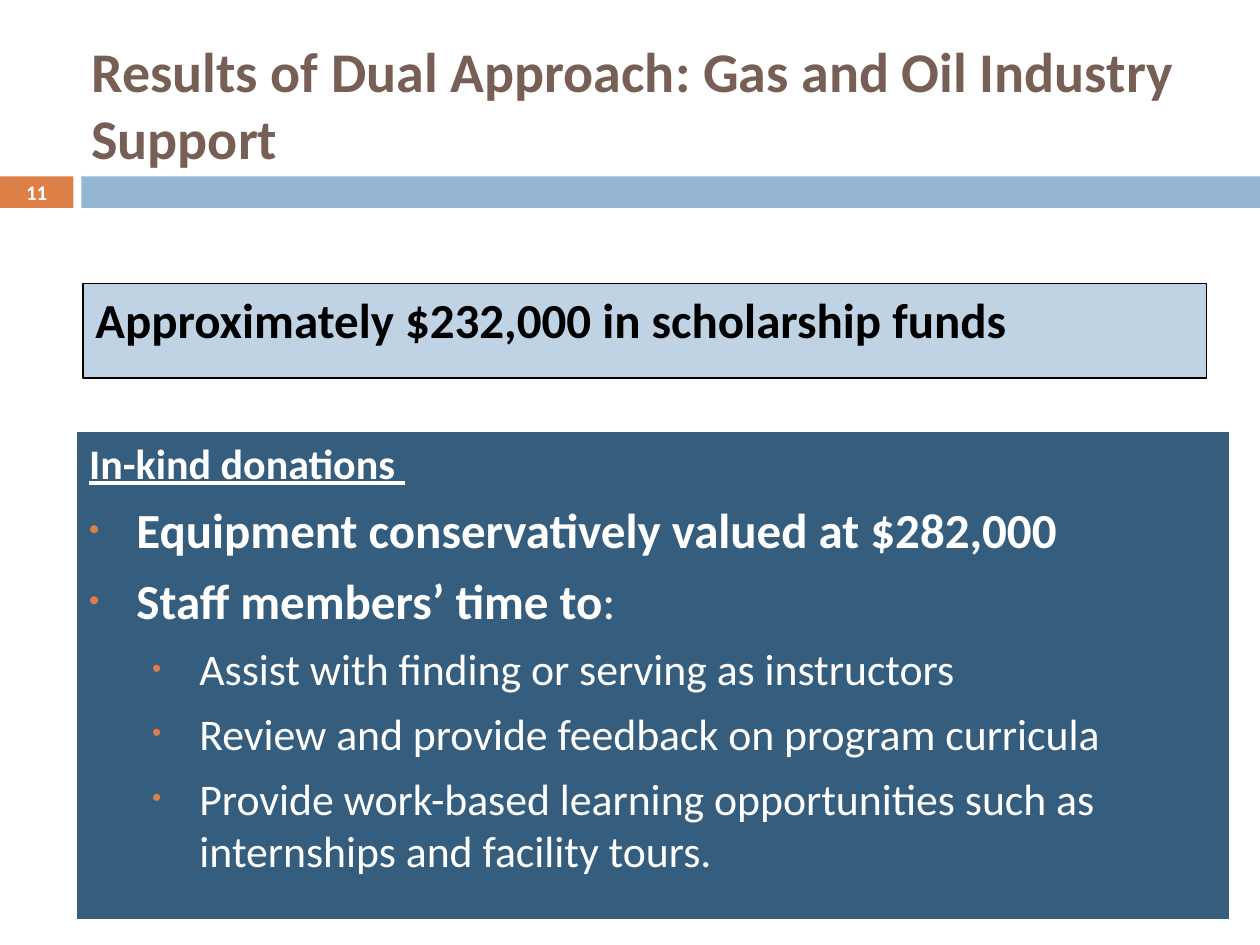
from lxml.etree import SubElement
from pptx import Presentation
from pptx.dml.color import RGBColor
from pptx.enum.shapes import MSO_SHAPE
from pptx.enum.text import MSO_ANCHOR, MSO_AUTO_SIZE, PP_ALIGN
from pptx.oxml.ns import qn
from pptx.util import Pt

BROWN = RGBColor(0x77, 0x5F, 0x55)
ORANGE = RGBColor(0xDD, 0x80, 0x47)
BLUE = RGBColor(0x94, 0xB6, 0xD2)
PALE = RGBColor(0xBF, 0xD3, 0xE4)
NAVY = RGBColor(0x35, 0x5D, 0x7E)
WHITE = RGBColor(0xFF, 0xFF, 0xFF)
BLACK = RGBColor(0, 0, 0)

TITLE = "Results of Dual Approach: Gas and Oil Industry Support"
PAGE_NUMBER = "11"
SCHOLARSHIPS = "Approximately $232,000 in scholarship funds"
HEADING = "In-kind donations "
DONATIONS = [
    (0, [("Equipment conservatively valued at $282,000", True)]),
    (0, [("Staff members’ time to", True), (":", False)]),
    (1, [("Assist with finding or serving as instructors", False)]),
    (1, [("Review and provide feedback on program curricula", False)]),
    (1, [("Provide work-based learning opportunities such as "
          "internships and facility tours.", False)]),
]
LEVEL_SIZES = [28, 25]
LEVEL_INDENTS = [27, 63]
HANGING = 27


def add_box(page, left, top, width, height, fill, line=None):
    box = page.shapes.add_shape(
        MSO_SHAPE.RECTANGLE, Pt(left), Pt(top), Pt(width), Pt(height))
    box.shadow.inherit = False
    box.fill.solid()
    box.fill.fore_color.rgb = fill
    if line is None:
        box.line.fill.background()
    else:
        box.line.color.rgb = line
        box.line.width = Pt(0.75)
    box.text_frame.word_wrap = True
    box.text_frame.vertical_anchor = MSO_ANCHOR.TOP
    return box


def add_span(para, text, size, color, bold=True, underline=None):
    span = para.add_run()
    span.text = text
    font = span.font
    font.name, font.size, font.bold = "Calibri", Pt(size), bold
    font.underline = underline
    font.color.rgb = color


def add_bullet(para, level):
    para.level = level
    props = para._p.get_or_add_pPr()
    props.set("marL", str(Pt(LEVEL_INDENTS[level])))
    props.set("indent", str(-Pt(HANGING)))
    color = SubElement(props, qn("a:buClr"))
    SubElement(color, qn("a:srgbClr"), val=str(ORANGE))
    SubElement(props, qn("a:buSzPct"), val="60000")
    SubElement(props, qn("a:buFont"), typeface="Arial")
    SubElement(props, qn("a:buChar"), char="•")


def first_para(box, align=PP_ALIGN.LEFT):
    para = box.text_frame.paragraphs[0]
    para.alignment = align
    return para


deck = Presentation()
deck.slide_width, deck.slide_height = Pt(720), Pt(540)
page = deck.slides.add_slide(deck.slide_layouts[5])

number_box = add_box(page, 0, 100.8, 42, 18, ORANGE)
add_box(page, 46.5, 100.8, 673.5, 18, BLUE)
number_box.text_frame.vertical_anchor = MSO_ANCHOR.MIDDLE
number_box.text_frame.margin_top = number_box.text_frame.margin_bottom = 0
add_span(first_para(number_box, PP_ALIGN.CENTER), PAGE_NUMBER, 11.9, WHITE)

title = page.shapes.title
title.left, title.top, title.width, title.height = Pt(45), Pt(20.4), Pt(642), Pt(78)
title.text_frame.word_wrap = True
title.text_frame.auto_size = MSO_AUTO_SIZE.NONE
title.text_frame.vertical_anchor = MSO_ANCHOR.MIDDLE
add_span(first_para(title), TITLE, 32, BROWN)

scholarship_box = add_box(page, 47.5, 162, 642, 54, PALE, BLACK)
para = first_para(scholarship_box)
para.space_before = Pt(7)
add_span(para, SCHOLARSHIPS, 28, BLACK)

donation_box = add_box(page, 43.9, 246.3, 659, 279.5, NAVY, WHITE)
para = first_para(donation_box)
para.space_before = Pt(7)
add_span(para, HEADING, 24, WHITE, underline=True)
for level, spans in DONATIONS:
    para = donation_box.text_frame.add_paragraph()
    para.alignment = PP_ALIGN.LEFT
    para.space_before = Pt(7)
    add_bullet(para, level)
    for text, bold in spans:
        add_span(para, text, LEVEL_SIZES[level], WHITE, bold)

deck.save("out.pptx")
